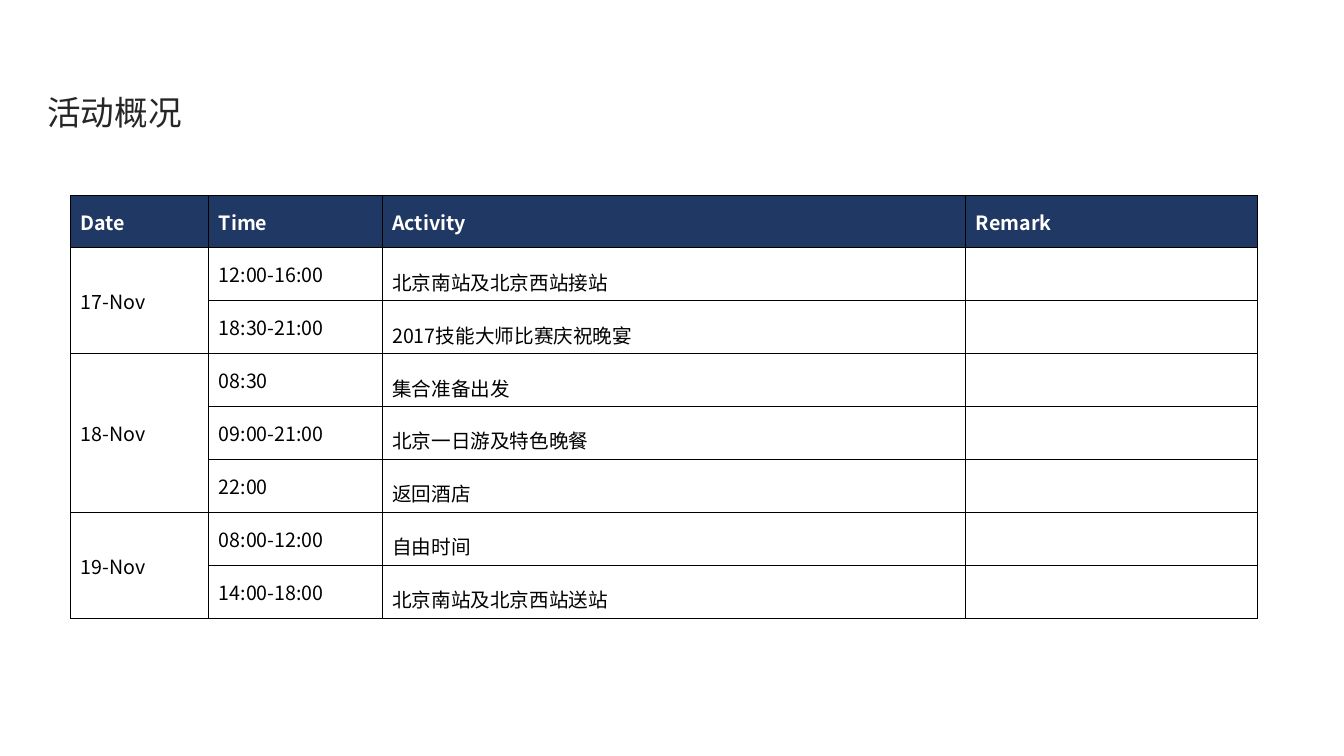
from lxml.etree import SubElement
from pptx import Presentation
from pptx.dml.color import RGBColor
from pptx.enum.text import MSO_ANCHOR, PP_ALIGN
from pptx.oxml.ns import qn
from pptx.util import Cm, Pt

FONT = "Noto Sans CJK SC"
NAVY, WHITE, BLACK, CHARCOAL = "203864", "FFFFFF", "000000", "262626"

HEADERS = ["Date", "Time", "Activity", "Remark"]
COL_WIDTHS = [3.48, 4.37, 14.71, 7.36]
SCHEDULE = {
    "17-Nov": [("12:00-16:00", "北京南站及北京西站接站"),
               ("18:30-21:00", "2017技能大师比赛庆祝晚宴")],
    "18-Nov": [("08:30", "集合准备出发"),
               ("09:00-21:00", "北京一日游及特色晚餐"),
               ("22:00", "返回酒店")],
    "19-Nov": [("08:00-12:00", "自由时间"),
               ("14:00-18:00", "北京南站及北京西站送站")],
}


def rgb(color):
    return RGBColor.from_string(color)


def style_paragraph(p, size, color, bold=False):
    f = p.font
    f.size, f.bold, f.name = Pt(size), bold, FONT
    f.color.rgb = rgb(color)
    # East Asian typeface for the Chinese characters
    latin = p._p.pPr.find(qn("a:defRPr")).find(qn("a:latin"))
    ea = latin.makeelement(qn("a:ea"), {"typeface": FONT})
    latin.addnext(ea)


def add_borders(cell, color=BLACK, width=1):
    tcPr = cell._tc.get_or_add_tcPr()
    for side in ("lnL", "lnR", "lnT", "lnB"):
        ln = SubElement(tcPr, qn(f"a:{side}"), w=str(Pt(width)))
        fill = SubElement(ln, qn("a:solidFill"))
        SubElement(fill, qn("a:srgbClr"), val=color)


def fill_cell(cell, text, header=False, spacing=None):
    add_borders(cell)
    cell.fill.solid()
    cell.fill.fore_color.rgb = rgb(NAVY if header else WHITE)
    cell.vertical_anchor = MSO_ANCHOR.MIDDLE
    cell.text = text
    p = cell.text_frame.paragraphs[0]
    if spacing:
        p.line_spacing = spacing
    style_paragraph(p, 14, WHITE if header else BLACK, header)


def add_title(s, text):
    title = s.shapes.title
    title.left, title.top = Cm(0.94), Cm(2.18)
    title.width, title.height = Cm(11.35), Cm(1.28)
    tf = title.text_frame
    tf.text = text
    tf.vertical_anchor = MSO_ANCHOR.MIDDLE
    p = tf.paragraphs[0]
    p.alignment = PP_ALIGN.LEFT
    style_paragraph(p, 24, CHARCOAL)


def add_schedule(s):
    rows = 1 + sum(len(events) for events in SCHEDULE.values())
    height = Cm(10.52)
    table = s.shapes.add_table(rows, len(HEADERS), Cm(1.78), Cm(4.93),
                               Cm(sum(COL_WIDTHS)), height).table
    table.first_row = table.horz_banding = False
    for column, width in zip(table.columns, COL_WIDTHS):
        column.width = Cm(width)
    for row in table.rows:
        row.height = height // rows

    # Header row
    for c, text in enumerate(HEADERS):
        fill_cell(table.cell(0, c), text, header=True)

    # One merged date cell per day
    r = 1
    for date, events in SCHEDULE.items():
        first = r
        for time, activity in events:
            fill_cell(table.cell(r, 0), date if r == first else "")
            fill_cell(table.cell(r, 1), time)
            fill_cell(table.cell(r, 2), activity, spacing=1.5)
            fill_cell(table.cell(r, 3), "")
            r += 1
        table.cell(first, 0).merge(table.cell(r - 1, 0))


def main():
    prs = Presentation()
    prs.slide_width, prs.slide_height = Cm(33.87), Cm(19.05)
    s = prs.slides.add_slide(prs.slide_layouts[5])
    add_title(s, "活动概况")
    add_schedule(s)
    prs.save("out.pptx")


if __name__ == "__main__":
    main()
